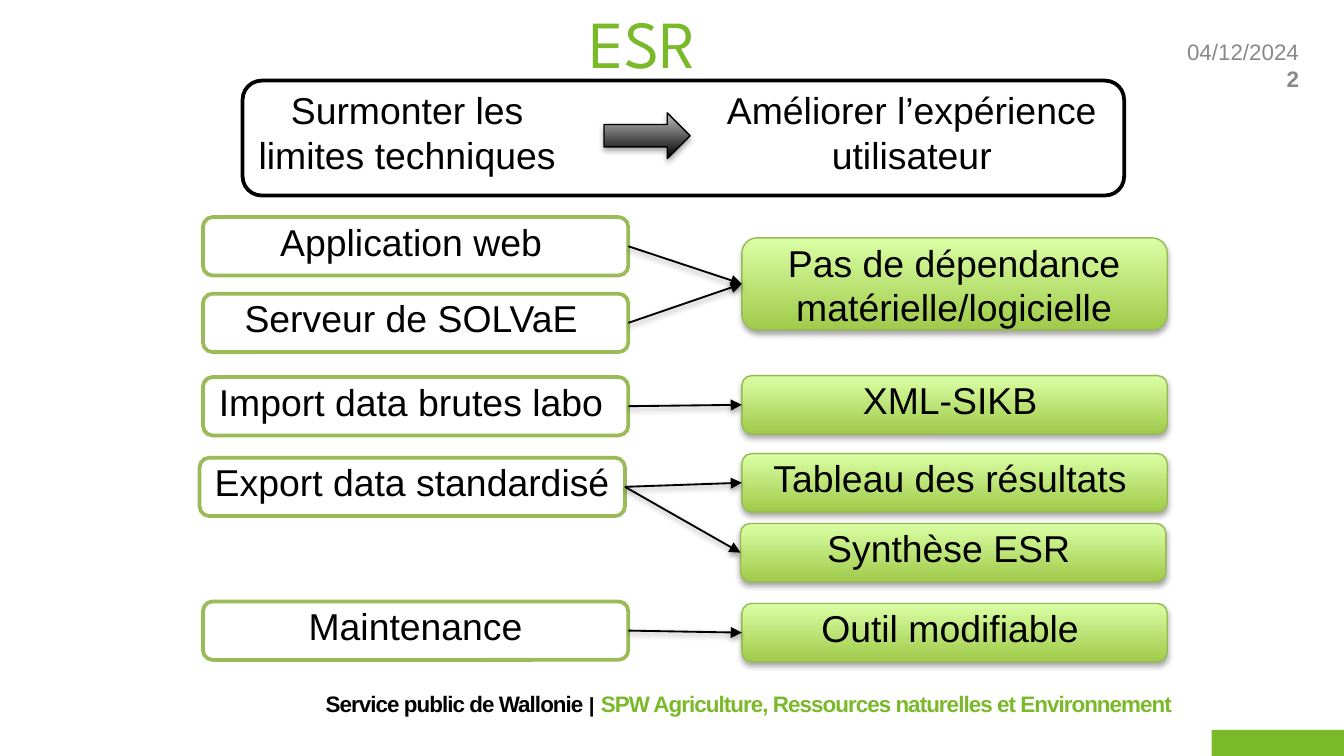
from lxml import etree
from pptx import Presentation
from pptx.dml.color import RGBColor
from pptx.enum.shapes import MSO_CONNECTOR, MSO_SHAPE
from pptx.enum.text import MSO_ANCHOR, MSO_AUTO_SIZE, PP_ALIGN
from pptx.oxml.ns import qn
from pptx.util import Pt

PX = 4572
ROUNDED, RECTANGLE = MSO_SHAPE.ROUNDED_RECTANGLE, MSO_SHAPE.RECTANGLE
ARROW = MSO_SHAPE.RIGHT_ARROW
STRAIGHT = MSO_CONNECTOR.STRAIGHT
CENTER, RIGHT = PP_ALIGN.CENTER, PP_ALIGN.RIGHT
MIDDLE, TOP = MSO_ANCHOR.MIDDLE, MSO_ANCHOR.TOP
GREEN, BLACK, GREY, WHITE = "7AB929", "000000", "898989", "FFFFFF"
LEFT_SIDE, RIGHT_SIDE = 1, 3

NEEDS = {
    "web": ("Application web", (302, 323, 633, 87), 620),
    "server": ("Serveur de SOLVaE", (302, 437, 633, 87), 620),
    "import": ("Import data brutes labo", (302, 561, 633, 87), 620),
    "export": ("Export data standardisé", (297, 681, 633, 87), 633),
    "upkeep": ("Maintenance", (302, 895, 633, 87), 633),
}
ANSWERS = {
    "independence": ("Pas de dépendance matérielle/logicielle", (1104, 354, 633, 137), (31, 570, 142)),
    "xml": ("XML-SIKB", (1104, 559, 633, 87), (0, 620, 108)),
    "table": ("Tableau des résultats", (1104, 675, 633, 87), (0, 620, 108)),
    "summary": ("Synthèse ESR", (1102, 779, 633, 87), (0, 620, 108)),
    "tool": ("Outil modifiable", (1104, 898, 633, 87), (0, 620, 108)),
}
LINKS = [
    ("web", "independence"), ("server", "independence"), ("import", "xml"),
    ("export", "table"), ("export", "summary"), ("upkeep", "tool"),
]


def color(value):
    """Turn a hex string into a colour."""
    return RGBColor.from_string(value)


def emu(box):
    """Scale a box from px to EMU."""
    return [length * PX for length in box]


def add_span(para, text, size, fill=BLACK, bold=False, font="Arial"):
    """Add one formatted run to a paragraph."""
    span = para.add_run()
    span.text = text
    span.font.name, span.font.size, span.font.bold = font, Pt(size), bold
    span.font.color.rgb = color(fill)
    return span


def add_text(shapes, box, align=CENTER, anchor=TOP):
    """Add a wrapping text box and return its frame."""
    frame = shapes.add_textbox(*emu(box)).text_frame
    frame.word_wrap = True
    frame.vertical_anchor = anchor
    frame.paragraphs[0].alignment = align
    return frame


def add_label(shapes, box, text):
    """Add a centred label."""
    add_span(add_text(shapes, box).paragraphs[0], text, 20)


def add_panel(shapes, kind, box, fill=None, line=None, width=2):
    """Add a preset shape with a plain, gradient or empty fill."""
    panel = shapes.add_shape(kind, *emu(box))
    panel.shadow.inherit = False
    if isinstance(fill, tuple):
        panel.fill.gradient()
        panel.fill.gradient_angle = 90
        for stop, shade in zip(panel.fill.gradient_stops, fill):
            stop.color.rgb = color(shade)
    elif fill:
        panel.fill.solid()
        panel.fill.fore_color.rgb = color(fill)
    else:
        panel.fill.background()
    if line:
        panel.line.color.rgb = color(line)
        panel.line.width = Pt(width)
    else:
        panel.line.fill.background()
    return panel


def add_shadow(shape, distance, alpha):
    """Give a shape a soft black shadow below it."""
    properties = shape._element.spPr
    effects = properties.find(qn("a:effectLst"))
    if effects is None:
        effects = etree.SubElement(properties, qn("a:effectLst"))
    shadow = etree.SubElement(effects, qn("a:outerShdw"), blurRad="40000",
                              dist=str(distance), dir="5400000", rotWithShape="0")
    shade = etree.SubElement(shadow, qn("a:srgbClr"), val=BLACK)
    etree.SubElement(shade, qn("a:alpha"), val=str(alpha * 1000))


def add_title(page, box):
    """Place the title placeholder."""
    title = page.shapes.title
    title.left, title.top, title.width, title.height = emu(box)
    title.text_frame.vertical_anchor = MIDDLE
    para = title.text_frame.paragraphs[0]
    para.alignment = CENTER
    add_span(para, "ESR", 36, GREEN, font="League Spartan")


def add_date(page, box):
    """Add the date with the page number below it."""
    frame = add_text(page.shapes, box, RIGHT)
    add_span(frame.paragraphs[0], "04/12/2024", 12, GREY)
    number = frame.add_paragraph()
    number.alignment = RIGHT
    add_span(number, "2", 12, GREY, True)


def add_footer(page, box):
    """Add the name of the service and the corner block."""
    left, top, width, height = box
    add_panel(page.shapes, RECTANGLE, (left + 1803, top + 69, 197, 39), GREEN)
    frame = add_text(page.shapes, box, RIGHT, MIDDLE)
    frame.auto_size = MSO_AUTO_SIZE.SHAPE_TO_FIT_TEXT
    for text, size, fill in (
        ("Service public de Wallonie ", 12, BLACK), ("|", 11, BLACK), (" ", 12, BLACK),
        ("SPW Agriculture, Ressources naturelles et Environnement", 12, GREEN),
    ):
        span = add_span(frame.paragraphs[0], text, size, fill, True)
        span.font._element.set("spc", "-50")


def add_goal(page, box):
    """Add the framed goal: two labels and the arrow between them."""
    left, top, width, height = box
    add_panel(page.shapes, ROUNDED, box, line=BLACK)
    arrow = add_panel(page.shapes, ARROW, (left + 538, top + 48, 128, 68),
                      (BLACK, "BDBDBD"), BLACK, 0.75)
    arrow.adjustments[0] = 0.49
    add_shadow(arrow, 23000, 35)
    add_label(page.shapes, (left - 34, top, 558, 158), "Surmonter les limites techniques")
    add_label(page.shapes, (left + 691, top, 610, 158), "Améliorer l’expérience utilisateur")


def add_need(page, text, box, label_width):
    """Add an outlined box with its label and return the box."""
    left, top, width, height = box
    shapes = page.shapes.add_group_shape().shapes
    panel = add_panel(shapes, ROUNDED, box, WHITE, "9BBB59")
    add_label(shapes, (left, top - 7, label_width, 108), text)
    return panel


def add_answer(page, text, box, label):
    """Add a green box with its label and return the box."""
    left, top, width, height = box
    inset, label_width, label_height = label
    shapes = page.shapes.add_group_shape().shapes
    panel = add_panel(shapes, ROUNDED, box, ("A0CA4A", "DAFFA5"), "98B955", 0.75)
    add_shadow(panel, 23000, 35)
    add_label(shapes, (left + inset, top - 7, label_width, label_height), text)
    return panel


def add_link(page, need, answer):
    """Join a need to its answer with an arrow."""
    link = page.shapes.add_connector(STRAIGHT, 0, 0, 0, 0)
    link.begin_connect(need, RIGHT_SIDE)
    link.end_connect(answer, LEFT_SIDE)
    link.line.color.rgb = color(BLACK)
    link.line.width = Pt(1)
    outline = link._element.spPr.find(qn("a:ln"))
    etree.SubElement(outline, qn("a:tailEnd"), type="triangle")
    add_shadow(link, 20000, 38)


def main():
    """Build and save the slide."""
    deck = Presentation()
    deck.slide_width, deck.slide_height = emu((2000, 1125))
    page = deck.slides.add_slide(deck.slide_layouts[5])
    add_title(page, (0, 17, 1914, 90))
    add_date(page, (1559, 47, 394, 118))
    add_footer(page, (0, 1017, 1764, 60))
    add_goal(page, (361, 120, 1312, 171))
    needs = {key: add_need(page, *parts) for key, parts in NEEDS.items()}
    answers = {key: add_answer(page, *parts) for key, parts in ANSWERS.items()}
    for need, answer in LINKS:
        add_link(page, needs[need], answers[answer])
    deck.save("out.pptx")


if __name__ == "__main__":
    main()
